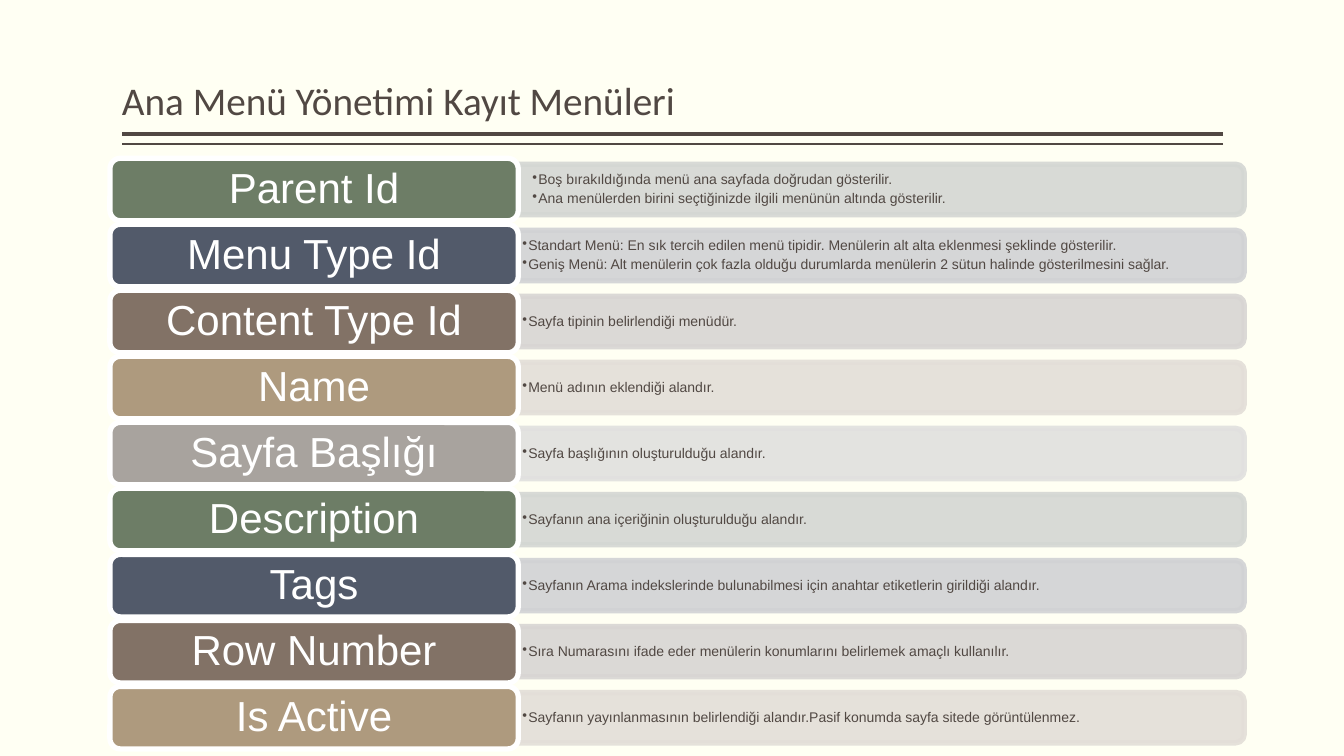
from lxml import etree
from pptx import Presentation
from pptx.dml.color import RGBColor
from pptx.enum.shapes import MSO_CONNECTOR, MSO_SHAPE
from pptx.enum.text import MSO_ANCHOR, PP_ALIGN
from pptx.oxml.ns import qn
from pptx.util import Inches, Pt

ROUNDED = MSO_SHAPE.ROUNDED_RECTANGLE
TWO_ROUNDED = MSO_SHAPE.ROUND_2_SAME_RECTANGLE
STRAIGHT = MSO_CONNECTOR.STRAIGHT
MIDDLE, BOTTOM = MSO_ANCHOR.MIDDLE, MSO_ANCHOR.BOTTOM
LEFT, CENTER = PP_ALIGN.LEFT, PP_ALIGN.CENTER

CREAM = RGBColor(0xFF, 0xFF, 0xF3)
WHITE = RGBColor(0xFF, 0xFF, 0xFF)
BROWN = RGBColor(0x51, 0x48, 0x43)
# Label colour and its pale bar colour, repeated down the rows
ROW_COLORS = [
    (RGBColor(0x6D, 0x7D, 0x66), RGBColor(0xD4, 0xD7, 0xD3)),
    (RGBColor(0x52, 0x5A, 0x6A), RGBColor(0xD1, 0xD2, 0xD4)),
    (RGBColor(0x82, 0x72, 0x66), RGBColor(0xD8, 0xD5, 0xD3)),
    (RGBColor(0xAE, 0x9A, 0x7E), RGBColor(0xE3, 0xDE, 0xD8)),
    (RGBColor(0xA8, 0xA3, 0x9E), RGBColor(0xE1, 0xE0, 0xDF)),
]

# Row geometry in inches
LABEL_LEFT, LABEL_WIDTH, LABEL_HEIGHT = 1.09, 4.05, 0.62
BAR_LEFT, BAR_WIDTH, BAR_HEIGHT = LABEL_LEFT + LABEL_WIDTH, 7.2, 0.5
TEXT_WIDTH, TEXT_HEIGHT = 7.18, 0.45
FIRST_TOP, LAST_TOP = 1.57, 6.81
BORDER = Pt(3.78)

ROWS = [
    ("Parent Id", ["Boş bırakıldığında menü ana sayfada doğrudan gösterilir.",
                   "Ana menülerden birini seçtiğinizde ilgili menünün altında gösterilir."]),
    ("Menu Type Id", ["Standart Menü: En sık tercih edilen menü tipidir. Menülerin alt alta "
                      "eklenmesi şeklinde gösterilir.",
                      "Geniş Menü: Alt menülerin çok fazla olduğu durumlarda menülerin 2 sütun "
                      "halinde gösterilmesini sağlar."]),
    ("Content Type Id", ["Sayfa tipinin belirlendiği menüdür."]),
    ("Name", ["Menü adının eklendiği alandır."]),
    ("Sayfa Başlığı", ["Sayfa başlığının oluşturulduğu alandır."]),
    ("Description", ["Sayfanın ana içeriğinin oluşturulduğu alandır."]),
    ("Tags", ["Sayfanın Arama indekslerinde bulunabilmesi için anahtar etiketlerin "
              "girildiği alandır."]),
    ("Row Number", ["Sıra Numarasını ifade eder menülerin konumlarını belirlemek amaçlı "
                    "kullanılır."]),
    ("Is Active", ["Sayfanın yayınlanmasının belirlendiği alandır.Pasif konumda sayfa sitede "
                   "görüntülenmez."]),
]


def set_frame(frame, anchor, side, edge):
    frame.word_wrap = True
    frame.vertical_anchor = anchor
    frame.margin_left = frame.margin_right = Inches(side)
    frame.margin_top = frame.margin_bottom = Inches(edge)


def add_text(paragraph, text, font_name, size, color, alignment=LEFT):
    paragraph.alignment = alignment
    paragraph.line_spacing = 0.9
    run = paragraph.add_run()
    run.text = text
    run.font.name = font_name
    run.font.size = Pt(size)
    run.font.color.rgb = color


def add_title(slide, text):
    title = slide.shapes.title
    title.left, title.top = Inches(1.21), Inches(0.08)
    title.width, title.height = Inches(10.92), Inches(1.2)
    set_frame(title.text_frame, BOTTOM, 0, 0.05)
    add_text(title.text_frame.paragraphs[0], text, "Calibri", 28, BROWN)


def add_rule(slide, top, weight):
    rule = slide.shapes.add_connector(
        STRAIGHT, Inches(12.13), Inches(top), Inches(1.21), Inches(top))
    rule.line.color.rgb = BROWN
    rule.line.width = Pt(weight)
    etree.SubElement(rule._element.spPr, qn("a:effectLst"))


def add_block(slide, kind, box, fill, line):
    block = slide.shapes.add_shape(kind, *(Inches(length) for length in box))
    block.shadow.inherit = False
    block.fill.solid()
    block.fill.fore_color.rgb = fill
    block.line.color.rgb = line
    block.line.width = BORDER
    return block


def add_bar(slide, middle, color):
    # The bar stands upright, then turns so its rounded end points right
    box = (BAR_LEFT + (BAR_WIDTH - BAR_HEIGHT) / 2, middle - BAR_WIDTH / 2,
           BAR_HEIGHT, BAR_WIDTH)
    bar = add_block(slide, TWO_ROUNDED, box, color, color)
    bar.rotation = 90
    for color_element in bar._element.spPr.iter(qn("a:srgbClr")):
        etree.SubElement(color_element, qn("a:alpha"), val="90000")


def add_bullets(slide, middle, items, side):
    box = slide.shapes.add_textbox(
        Inches(BAR_LEFT), Inches(middle - TEXT_HEIGHT / 2),
        Inches(TEXT_WIDTH), Inches(TEXT_HEIGHT))
    frame = box.text_frame
    set_frame(frame, MIDDLE, side, side / 2)
    for index, item in enumerate(items):
        paragraph = frame.add_paragraph() if index else frame.paragraphs[0]
        paragraph.level = 1
        properties = paragraph._p.get_or_add_pPr()
        properties.set("marL", str(Inches(0.06)))
        properties.set("indent", str(-Inches(0.06)))
        etree.SubElement(properties, qn("a:buChar"), char="•")
        paragraph.space_after = Pt(2.5)
        add_text(paragraph, item, "Arial", 10, BROWN)


def add_label(slide, top, text, color):
    box = (LABEL_LEFT, top, LABEL_WIDTH, LABEL_HEIGHT)
    label = add_block(slide, ROUNDED, box, color, WHITE)
    set_frame(label.text_frame, MIDDLE, 0.12, 0.06)
    add_text(label.text_frame.paragraphs[0], text, "Arial", 30, WHITE, CENTER)


def main():
    presentation = Presentation()
    presentation.slide_width = Inches(13.33)
    presentation.slide_height = Inches(7.5)
    slide = presentation.slides.add_slide(presentation.slide_layouts[5])
    slide.background.fill.solid()
    slide.background.fill.fore_color.rgb = CREAM

    # Title with its double rule
    add_rule(slide, 1.33, 3)
    add_rule(slide, 1.43, 1)
    add_title(slide, "Ana Menü Yönetimi Kayıt Menüleri")

    # One row for each menu field
    pitch = (LAST_TOP - FIRST_TOP) / (len(ROWS) - 1)
    for index, (name, items) in enumerate(ROWS):
        label_color, bar_color = ROW_COLORS[index % len(ROW_COLORS)]
        top = FIRST_TOP + index * pitch
        middle = top + LABEL_HEIGHT / 2
        add_bar(slide, middle, bar_color)
        add_bullets(slide, middle, items, 0.04 if index else 0.14)
        add_label(slide, top, name, label_color)

    presentation.save("out.pptx")


if __name__ == "__main__":
    main()
